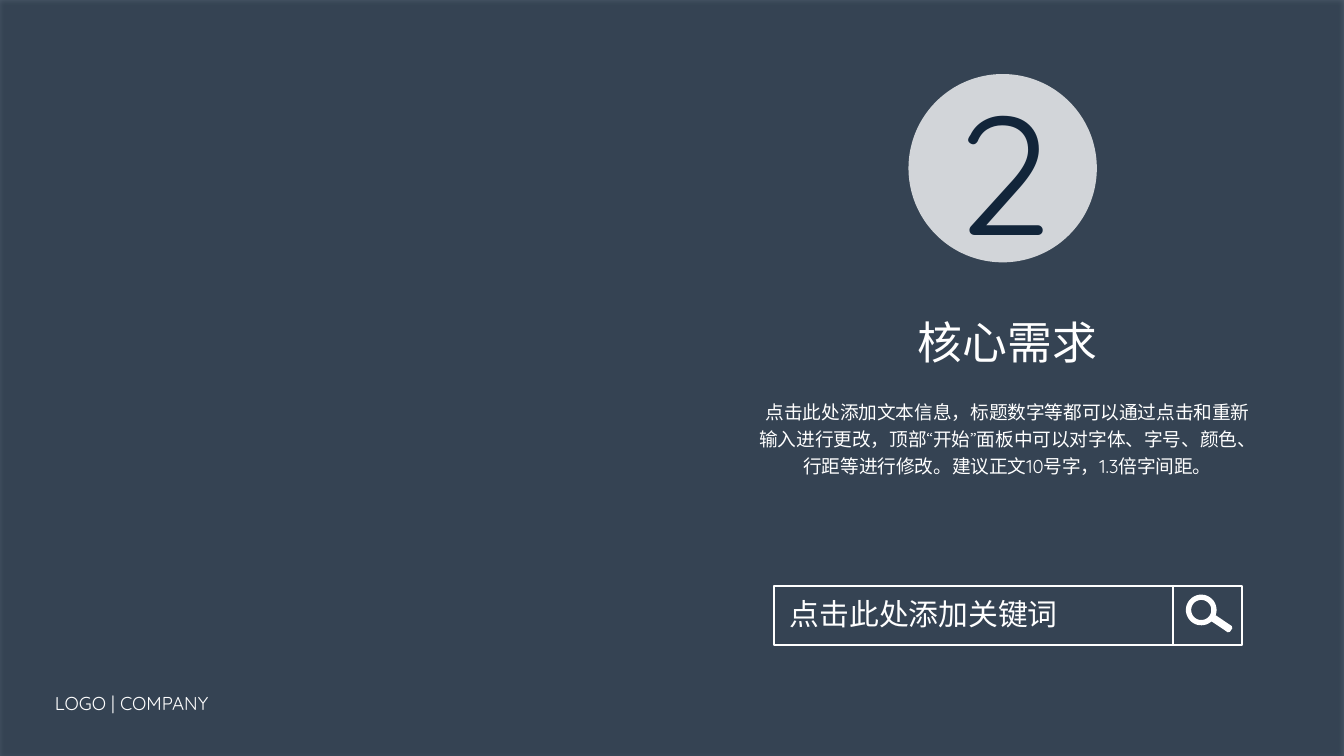
from dataclasses import dataclass
from math import asin, cos, pi, sin

from lxml.etree import SubElement
from pptx import Presentation
from pptx.dml.color import RGBColor
from pptx.enum.shapes import MSO_CONNECTOR, MSO_SHAPE
from pptx.enum.text import MSO_ANCHOR, PP_ALIGN
from pptx.oxml.ns import qn
from pptx.util import Cm, Pt


@dataclass(frozen=True)
class Theme:
    navy: RGBColor = RGBColor(0x12, 0x25, 0x3A)
    white: RGBColor = RGBColor(0xFF, 0xFF, 0xFF)
    head_font: str = "Roboto"
    body_font: str = "Quicksand"
    number: int = 90
    title: int = 24
    keyword: int = 16
    body: int = 10


T = Theme()


def write(sp, text, size, font, color=T.white, align=PP_ALIGN.LEFT,
          anchor=MSO_ANCHOR.TOP, wrap=True, spacing=None):
    tf = sp.text_frame
    tf.word_wrap = wrap
    tf.vertical_anchor = anchor
    p = tf.paragraphs[0]
    p.alignment = align
    p.line_spacing = spacing
    r = p.add_run()
    r.text = text
    r.font.size = Pt(size)
    r.font.name = font
    r.font.color.rgb = color
    SubElement(r.font._element, qn("a:ea"), typeface=font)


def paint(sp, fill=None, alpha=100, line=None):
    sp.shadow.inherit = False
    if fill is None:
        sp.fill.background()
    else:
        sp.fill.solid()
        sp.fill.fore_color.rgb = fill
        if alpha < 100:
            clr = sp._element.spPr.find(qn("a:solidFill"))[0]
            SubElement(clr, qn("a:alpha"), val=str(alpha * 1000))
    if line is None:
        sp.line.fill.background()
    else:
        sp.line.color.rgb = line
        sp.line.width = Pt(1)


prs = Presentation()
prs.slide_width, prs.slide_height = Cm(25.4), Cm(14.29)
s = prs.slides.add_slide(prs.slide_layouts[6])

# Translucent backdrop with its soft shadow
sp = s.shapes.add_shape(MSO_SHAPE.RECTANGLE, 0, 0, prs.slide_width, prs.slide_height)
paint(sp, T.navy, alpha=75)
shadow = SubElement(sp._element.spPr.find(qn("a:effectLst")), qn("a:outerShdw"),
                    blurRad=str(Pt(2)), dist=str(Pt(1)), dir="5400000", rotWithShape="0")
clr = SubElement(shadow, qn("a:srgbClr"), val="000000")
SubElement(clr, qn("a:alpha"), val="50000")

# Section number
sp = s.shapes.add_shape(MSO_SHAPE.OVAL, Cm(17.17), Cm(1.4), Cm(3.56), Cm(3.56))
paint(sp, T.white, alpha=78)
write(sp, "2", T.number, T.body_font, color=T.navy, align=PP_ALIGN.CENTER,
      anchor=MSO_ANCHOR.MIDDLE)

# Title and description
sp = s.shapes.add_textbox(Cm(17.07), Cm(5.82), Cm(3.94), Cm(1.27))
write(sp, "核心需求", T.title, T.head_font, align=PP_ALIGN.CENTER, wrap=False)

sp = s.shapes.add_textbox(Cm(14.1), Cm(7.37), Cm(9.88), Cm(1.78))
write(sp, "点击此处添加文本信息，标题数字等都可以通过点击和重新输入进行更改，"
      "顶部“开始”面板中可以对字体、字号、颜色、行距等进行修改。"
      "建议正文10号字，1.3倍字间距。",
      T.body, T.body_font, align=PP_ALIGN.CENTER, spacing=1.2)

# Search box: frame, keyword and divider
left, top, width, height = Cm(14.63), Cm(11.07), Cm(8.84), Cm(1.12)
sp = s.shapes.add_shape(MSO_SHAPE.RECTANGLE, left, top, width, height)
paint(sp, line=T.white)

sp = s.shapes.add_textbox(Cm(14.68), Cm(11.13), Cm(6.07), Cm(0.94))
write(sp, "点击此处添加关键词", T.keyword, T.head_font)

divider = s.shapes.add_connector(MSO_CONNECTOR.STRAIGHT, Cm(22.17), top + height,
                                 Cm(22.17), top)
divider.line.color.rgb = T.white
divider.line.width = Pt(1)
SubElement(divider._element.spPr, qn("a:effectLst"))

# Magnifier: outer ring with handle, then the hole in the lens
cx, cy = 22.67, 11.64
outer, inner, handle, tip = 0.29, 0.19, 0.07, 23.35
start = asin(handle / outer)
steps = 48
angles = [start + (2 * pi - 2 * start) * i / steps for i in range(steps + 1)]
outline = [(cx + outer * cos(a), cy + outer * sin(a)) for a in angles]
outline += [(tip - 0.03, cy - handle), (tip, cy - handle + 0.03),
            (tip, cy + handle - 0.03), (tip - 0.03, cy + handle)]
lens = [(cx + inner * cos(a), cy - inner * sin(a))
        for a in (2 * pi * i / steps for i in range(steps))]

outline, lens = ([(Cm(x), Cm(y)) for x, y in pts] for pts in (outline, lens))
fb = s.shapes.build_freeform(*outline[0])
fb.add_line_segments(outline[1:])
fb.move_to(*lens[0])
fb.add_line_segments(lens[1:])
sp = fb.convert_to_shape()
paint(sp, T.white)
sp.rotation = 33.9

# Footer
sp = s.shapes.add_textbox(Cm(0.79), Cm(12.95), Cm(3.89), Cm(0.69))
write(sp, "LOGO | COMPANY", T.body, T.body_font, wrap=False)

prs.save("out.pptx")
